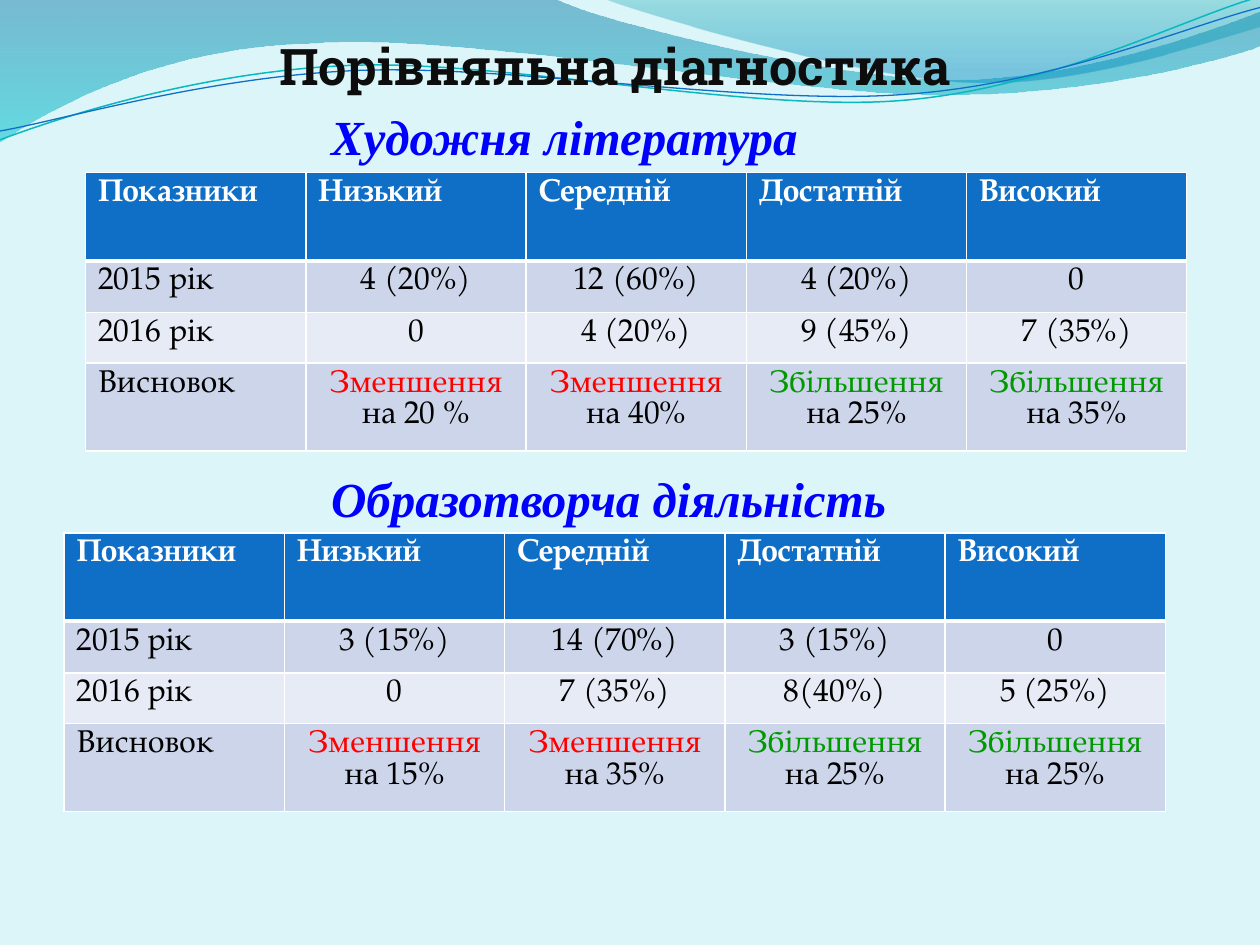
from lxml.etree import SubElement
from pptx import Presentation
from pptx.dml.color import RGBColor
from pptx.enum.text import MSO_ANCHOR, PP_ALIGN
from pptx.oxml import parse_xml
from pptx.oxml.ns import nsdecls, qn
from pptx.util import Inches, Pt

TABLE_FONT = {"name": "TeX Gyre Pagella", "size": Pt(18), "bold": False}
HEADING_FONT = {"name": "Times New Roman", "size": Pt(28), "bold": True, "italic": True}
TITLE_FONT = {"name": "Roboto Slab", "size": Pt(28.8), "bold": True}
VERDICT_COLORS = {"Зменшення": "FF0000", "Збільшення": "009900"}
ROW_FILLS = ["0F6FC6", "CCD5EA", "E7EBF5", "CCD5EA"]
ROW_HEIGHTS = [0.7, 0.41, 0.4, 0.7]
HEADER = ["Показники", "Низький", "Середній", "Достатній", "Високий"]

LITERATURE = [
    HEADER,
    ["2015 рік", "4 (20%)", "12 (60%)", "4 (20%)", "0"],
    ["2016 рік", "0", "4 (20%)", "9 (45%)", "7 (35%)"],
    ["Висновок", "Зменшення на 20 %", "Зменшення на 40%",
     "Збільшення на 25%", "Збільшення на 35%"],
]
ART = [
    HEADER,
    ["2015 рік", "3 (15%)", "14 (70%)", "3 (15%)", "0"],
    ["2016 рік", "0", "7 (35%)", "8(40%)", "5 (25%)"],
    ["Висновок", "Зменшення на 15%", "Зменшення на 35%",
     "Збільшення на 25%", "Збільшення на 25%"],
]

# Each wave is a list of steps: 2 numbers for a straight line, 6 for a Bezier curve.
# Gradient stops are (position, colour, opacity in percent).
FILLED_WAVES = [
    ([(0, 0), (4.4, -0.01), (4.76, 0.17, 6.64, 0.63, 7.58, 0.63),
      (8.53, 0.63, 9.58, 0.26, 10, 0.09), (10.01, 0.36),
      (9.83, 0.44, 8.7, 0.76, 7.46, 0.75), (6.22, 0.75, 3.82, 0.28, 2.57, 0.34),
      (1.29, 0.36, 0.46, 0.83, -0.01, 1.13)],
     [(0, "0074A1", 45), (1, "00C6CF", 55)]),
    ([(4.79, -0.01), (5.09, 0.11, 6.82, 0.62, 7.69, 0.65),
      (8.56, 0.69, 9.61, 0.32, 10, 0.21), (10, 0)],
     [(0, "00A1A9", 30), (0.8, "008BBF", 45)]),
]
LINE_WAVES = [
    ([(0, 1.11), (0.48, 0.93, 1.58, 0.57, 2.77, 0.52),
      (3.95, 0.47, 5.93, 0.89, 7.13, 0.8), (8.33, 0.71, 9.38, 0.15, 9.98, -0.02)],
     "0AB8BF", 0.85),
    ([(0, 1.04), (0.47, 0.96, 1.64, 0.61, 2.83, 0.56),
      (4.03, 0.51, 5.97, 0.84, 7.17, 0.75), (8.36, 0.67, 9.41, 0.21, 10, 0.06)],
     "0F6FC6", 0.75),
]


def rgb(value):
    return RGBColor.from_string(value)


def set_font(font, values, color):
    for name, value in values.items():
        setattr(font, name, value)
    font.color.rgb = rgb(color)


def bend(wave, steps):
    """Join the three straight segments of each Bezier step into one curve."""
    segments = iter(wave._element.xpath(".//a:path/a:lnTo"))
    for step in steps[1:]:
        curve = next(segments)
        if len(step) == 6:
            curve.tag = qn("a:cubicBezTo")
            for _ in range(2):
                segment = next(segments)
                curve.append(segment[0])
                segment.getparent().remove(segment)


def add_wave(page, steps, closed):
    points = [(Inches(step[i]), Inches(step[i + 1]))
              for step in steps for i in range(0, len(step), 2)]
    builder = page.shapes.build_freeform(*points[0], scale=1.0)
    builder.add_line_segments(points[1:], close=closed)
    wave = builder.convert_to_shape()
    bend(wave, steps)
    wave.shadow.inherit = False
    return wave


def add_waves(page):
    for steps, stops in FILLED_WAVES:
        wave = add_wave(page, steps, closed=True)
        wave.line.fill.background()
        wave.fill.gradient()
        wave.fill.gradient_angle = 270
        for stop, (position, color, _) in zip(wave.fill.gradient_stops, stops):
            stop.position = position
            stop.color.rgb = rgb(color)
        colors = wave._element.xpath(".//a:gs/a:srgbClr")
        for element, (_, _, opacity) in zip(colors, stops):
            SubElement(element, qn("a:alpha")).set("val", str(opacity * 1000))
    for steps, color, width in LINE_WAVES:
        wave = add_wave(page, steps, closed=False)
        wave.fill.background()
        wave.line.color.rgb = rgb(color)
        wave.line.width = Pt(width)


def place_title(page, left, top, width, height):
    title = page.shapes.title
    page.shapes._spTree.append(title._element)  # bring in front of the waves
    title.left, title.top = Inches(left), Inches(top)
    title.width, title.height = Inches(width), Inches(height)
    frame = title.text_frame
    frame.vertical_anchor = MSO_ANCHOR.BOTTOM
    frame.margin_left = frame.margin_right = frame.margin_bottom = 0
    frame.text = "Порівняльна діагностика"
    para = frame.paragraphs[0]
    para.alignment = PP_ALIGN.CENTER
    set_font(para.runs[0].font, TITLE_FONT, "0D0D0D")


def add_heading(page, text, left, top, width, height):
    box = page.shapes.add_textbox(*map(Inches, (left, top, width, height)))
    box.text_frame.word_wrap = True
    box.text_frame.text = text
    set_font(box.text_frame.paragraphs[0].runs[0].font, HEADING_FONT, "0000FF")


def set_borders(cell, row):
    widths = {"L": 1, "R": 1, "T": 3 if row == 1 else 1, "B": 3 if row == 0 else 1}
    properties = cell._tc.get_or_add_tcPr()
    for index, (side, width) in enumerate(widths.items()):
        properties.insert(index, parse_xml(
            f'<a:ln{side} {nsdecls("a")} w="{Pt(width)}"><a:solidFill>'
            f'<a:srgbClr val="FFFFFF"/></a:solidFill></a:ln{side}>'))


def fill_cell(cell, text, row, column):
    cell.fill.solid()
    cell.fill.fore_color.rgb = rgb(ROW_FILLS[row])
    set_borders(cell, row)
    para = cell.text_frame.paragraphs[0]
    if row and column:
        para.alignment = PP_ALIGN.CENTER
    word, space, rest = text.partition(" ")
    if word in VERDICT_COLORS:
        parts = [(word + space, VERDICT_COLORS[word]), (rest, "000000")]
    else:
        parts = [(text, "000000" if row else "FFFFFF")]
    for part, color in parts:
        span = para.add_run()
        span.text = part
        set_font(span.font, TABLE_FONT | {"bold": row == 0}, color)


def add_results(page, rows, left, top, width):
    height = sum(ROW_HEIGHTS)
    frame = page.shapes.add_table(len(rows), len(HEADER),
                                  *map(Inches, (left, top, width, height)))
    table = frame.table
    for column in table.columns:
        column.width = Inches(width / len(HEADER))
    for row, texts in enumerate(rows):
        table.rows[row].height = Inches(ROW_HEIGHTS[row])
        for column, text in enumerate(texts):
            fill_cell(table.cell(row, column), text, row, column)


def main():
    deck = Presentation()
    deck.slide_width, deck.slide_height = Inches(10), Inches(7.5)
    page = deck.slides.add_slide(deck.slide_layouts[5])
    page.background.fill.solid()
    page.background.fill.fore_color.rgb = rgb("DBF5F9")
    add_waves(page)
    place_title(page, 0.43, 0.21, 8.9, 0.55)
    add_heading(page, "Художня література", 2.53, 0.8, 5.04, 0.57)
    add_results(page, LITERATURE, 0.68, 1.37, 8.74)
    add_results(page, ART, 0.51, 4.23, 8.74)
    add_heading(page, "Образотворча діяльність", 2.53, 3.67, 5.04, 0.57)
    deck.save("out.pptx")


if __name__ == "__main__":
    main()
